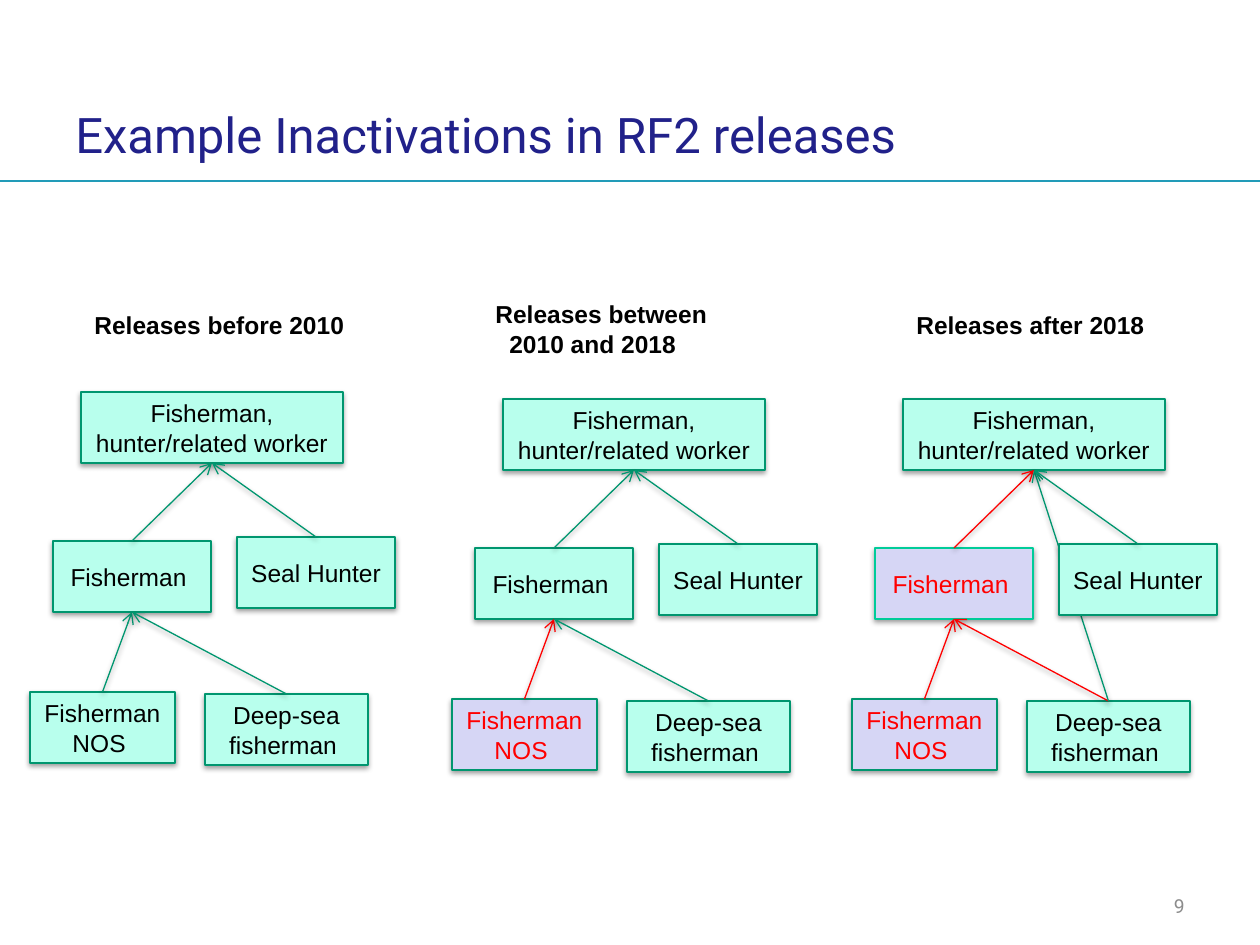
import pptx
import pptx.util
import pptx.dml.color
import pptx.enum.shapes
import pptx.enum.text
import pptx.oxml.ns
from lxml import etree

PX = 914400 / 126
TOP, BOTTOM = 0, 2
ALIGN = pptx.enum.text.PP_ALIGN
ANCHOR = pptx.enum.text.MSO_ANCHOR
STRAIGHT = pptx.enum.shapes.MSO_CONNECTOR.STRAIGHT

COLORS = {
    "title": "21218A", "number": "8C8C8C", "rule": "229BB8", "text": "000000",
    "active": "B8FFED", "inactive": "D6D6F5", "edge": "00966F",
    "light edge": "00CC99", "red": "FF0000", "shadow": "000000",
}

# Concepts, in drawing order: name, text, (left, top, width) in the first tree
BOX_HEIGHT = 71
CONCEPTS = [
    ("root", "Fisherman, hunter/related worker ", (81, 392, 262)),
    ("fisherman", "Fisherman ", (53, 541, 158)),
    ("nos", "Fisherman NOS ", (30, 692, 145)),
    ("deep", "Deep-sea fisherman ", (205, 694, 163)),
    ("seal", "Seal Hunter ", (237, 537, 158)),
]
LINKS = [("fisherman", "root"), ("nos", "fisherman"),
         ("deep", "fisherman"), ("seal", "root")]

# One tree for each release period; offset is from the first tree
TREES = [
    {"heading": ["Releases before 2010"], "heading box": (82, 304, 277, 43),
     "offset": (0, 0), "inactive": [], "red links": [], "extra links": []},
    {"heading": ["Releases between", "2010 and 2018"],
     "heading box": (483, 293, 238, 72),
     "offset": (422, 7), "inactive": ["nos"],
     "red links": [("nos", "fisherman")], "extra links": []},
    {"heading": ["Releases after 2018"], "heading box": (904, 304, 254, 43),
     "offset": (822, 7), "inactive": ["fisherman", "nos"],
     "red links": [("fisherman", "root"), ("nos", "fisherman"),
                   ("deep", "fisherman")],
     "extra links": [("deep", "root")], "light edge": ["fisherman"]},
]


def px(*lengths):
    return [round(length * PX) for length in lengths]


def color(name):
    return pptx.dml.color.RGBColor.from_string(COLORS[name])


def add_child(parent, tag, **attributes):
    return etree.SubElement(parent, pptx.oxml.ns.qn(tag), attributes)


def add_shadow(shape):
    effects = add_child(shape._element.spPr, "a:effectLst")
    outer = add_child(effects, "a:outerShdw", blurRad="39370", dist="20320",
                      dir="5400000", rotWithShape="0")
    tint = add_child(outer, "a:srgbClr", val=COLORS["shadow"])
    add_child(tint, "a:alpha", val="38000")


def set_line(shape, name):
    shape.line.color.rgb = color(name)
    shape.line.width = pptx.util.Pt(0.75)


def write(shape, lines, size, font, name, align=ALIGN.LEFT,
          anchor=ANCHOR.MIDDLE, wrap=True, bold=False):
    frame = shape.text_frame
    frame.word_wrap = wrap
    frame.vertical_anchor = anchor
    frame.text = "\n".join(lines)
    for paragraph in frame.paragraphs:
        paragraph.alignment = align
        for span in paragraph.runs:
            span.font.size = pptx.util.Pt(size)
            span.font.name = font
            span.font.bold = bold
            span.font.color.rgb = color(name)


def add_concept(page, text, left, top, width, inactive, edge):
    box = page.shapes.add_shape(pptx.enum.shapes.MSO_SHAPE.RECTANGLE,
                                *px(left, top, width, BOX_HEIGHT))
    box.fill.solid()
    box.fill.fore_color.rgb = color("inactive" if inactive else "active")
    set_line(box, edge)
    add_shadow(box)
    write(box, [text], 14, "Arial", "red" if inactive else "text", ALIGN.CENTER)
    return box


def add_link(page, child, parent, name):
    link = page.shapes.add_connector(STRAIGHT, 0, 0, 0, 0)
    link.begin_connect(child, TOP)
    link.end_connect(parent, BOTTOM)
    set_line(link, name)
    add_child(link.line._get_or_add_ln(), "a:tailEnd", type="arrow")
    add_shadow(link)


def add_tree(page, tree):
    # A link is drawn with its child, so a later box covers it
    dx, dy = tree["offset"]
    boxes = {}
    for name, text, (left, top, width) in CONCEPTS:
        edge = "light edge" if name in tree.get("light edge", []) else "edge"
        boxes[name] = add_concept(page, text, left + dx, top + dy, width,
                                  name in tree["inactive"], edge)
        for child, parent in LINKS + tree["extra links"]:
            if child == name:
                red = (child, parent) in tree["red links"]
                add_link(page, boxes[child], boxes[parent],
                         "red" if red else "edge")

    heading = page.shapes.add_textbox(*px(*tree["heading box"]))
    write(heading, tree["heading"], 14, "Arial", "text",
          anchor=ANCHOR.TOP, wrap=False, bold=True)
    for paragraph in heading.text_frame.paragraphs[1:]:
        paragraph._p.get_or_add_pPr().set("marL", str(px(14)[0]))


def main():
    deck = pptx.Presentation()
    deck.slide_width, deck.slide_height = px(1260, 945)
    page = deck.slides.add_slide(deck.slide_layouts[6])

    # Rule under the title
    rule = page.shapes.add_connector(STRAIGHT, *px(0, 181, 1260, 181))
    set_line(rule, "rule")
    add_child(rule._element.spPr, "a:effectLst")

    # Page number and title
    number = page.shapes.add_textbox(*px(903, 886, 294, 40))
    write(number, ["9"], 11, "Roboto", "number", ALIGN.RIGHT)
    title = page.shapes.add_textbox(*px(63, 98, 908, 71))
    write(title, ["Example Inactivations in RF2 releases"], 28, "Roboto", "title")

    # Concept trees
    for tree in TREES:
        add_tree(page, tree)

    deck.save("out.pptx")


if __name__ == "__main__":
    main()
